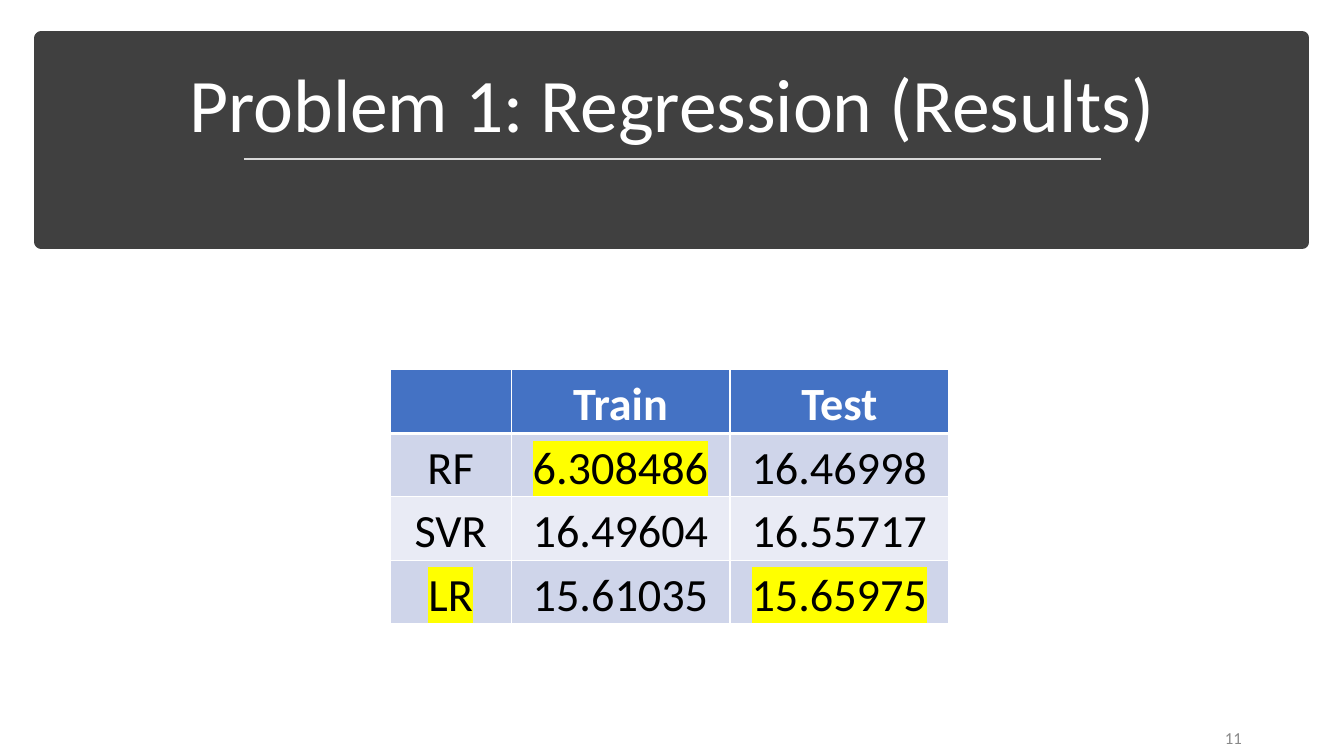
from lxml.etree import SubElement
from pptx import Presentation
from pptx.dml.color import RGBColor
from pptx.enum.shapes import MSO_CONNECTOR as Connector, MSO_SHAPE as Preset
from pptx.enum.text import MSO_ANCHOR as Anchor, MSO_AUTO_SIZE as AutoSize, PP_ALIGN as Align
from pptx.oxml.ns import qn
from pptx.util import Inches, Pt

COLORS = {
    "banner": "404040", "white": "FFFFFF", "rule": "D9D9D9", "number": "898989",
    "header": "4472C4", "odd": "CFD5EA", "even": "E9EBF5", "black": "000000",
    "highlight": "FFFF00",
}
RESULTS = [
    ["", "Train", "Test"],
    ["RF", "6.308486", "16.46998"],
    ["SVR", "16.49604", "16.55717"],
    ["LR", "15.61035", "15.65975"],
]
BEST = {"6.308486", "LR", "15.65975"}


def color(name):
    return RGBColor.from_string(COLORS[name])


class ResultsSlide:
    """Builds the results slide, with every length given in percent of the slide's size."""

    font = "Calibri"

    def __init__(self, presentation):
        self.width, self.height = presentation.slide_width, presentation.slide_height
        self.slide = presentation.slides.add_slide(presentation.slide_layouts[5])
        self.shapes = self.slide.shapes

    def across(self, share):
        return round(self.width * share / 100)

    def down(self, share):
        return round(self.height * share / 100)

    def box(self, left, top, width, height):
        return self.across(left), self.down(top), self.across(width), self.down(height)

    def set_text(self, frame, text, size, name, align, bold=False):
        frame.text = text
        paragraph = frame.paragraphs[0]
        paragraph.alignment = align
        for run in paragraph.runs:
            run.font.name, run.font.size, run.font.bold = self.font, Pt(size), bold
            run.font.color.rgb = color(name)
        return paragraph

    def title(self, text, *place):
        title = self.shapes.title
        title.left, title.top, title.width, title.height = self.box(*place)
        frame = title.text_frame
        frame.word_wrap, frame.auto_size = True, AutoSize.NONE
        frame.vertical_anchor = Anchor.BOTTOM
        self.set_text(frame, text, 54, "white", Align.CENTER).line_spacing = 0.9

    def banner(self, *place):
        banner = self.shapes.add_shape(Preset.RECTANGLE, *self.box(*place))
        banner.shadow.inherit = False
        banner.fill.solid()
        banner.fill.fore_color.rgb = banner.line.color.rgb = color("banner")
        banner.line.width = Pt(10)
        self.shapes.title.element.addprevious(banner.element)

    def rule(self, left, right, top):
        rule = self.shapes.add_connector(
            Connector.STRAIGHT, self.across(left), self.down(top), self.across(right), self.down(top))
        rule.line.color.rgb = color("rule")
        rule.line.width = Pt(1.75)
        SubElement(rule.element.spPr, qn("a:effectLst"))

    def number(self, text, *place):
        frame = self.shapes.add_textbox(*self.box(*place)).text_frame
        frame.word_wrap = True
        frame.vertical_anchor = Anchor.MIDDLE
        self.set_text(frame, text, 12, "number", Align.RIGHT).space_after = Pt(6)

    def table(self, rows, left, top, widths, row_height):
        place = self.box(left, top, sum(widths), row_height * len(rows))
        table = self.shapes.add_table(len(rows), len(widths), *place).table
        for column, width in zip(table.columns, widths):
            column.width = self.across(width)
        for index, values in enumerate(rows):
            table.rows[index].height = self.down(row_height)
            for column, text in enumerate(values):
                self.cell(table.cell(index, column), index, text)

    def cell(self, cell, row, text):
        cell.margin_left = cell.margin_right = cell.margin_top = Inches(0.01)
        cell.margin_bottom = 0
        cell.vertical_anchor = Anchor.BOTTOM
        self.borders(cell, top=3 if row == 1 else 1, bottom=3 if row == 0 else 1)
        cell.fill.solid()
        cell.fill.fore_color.rgb = color("header" if row == 0 else "odd" if row % 2 else "even")
        ink = "black" if row else "white"
        paragraph = self.set_text(cell.text_frame, text, 33, ink, Align.CENTER, bold=row == 0)
        if text in BEST:
            self.highlight(paragraph.runs[0])

    def borders(self, cell, top, bottom):
        properties = cell._tc.get_or_add_tcPr()
        for side, width in (("L", 1), ("R", 1), ("T", top), ("B", bottom)):
            line = SubElement(properties, qn(f"a:ln{side}"), w=str(Pt(width)))
            fill = SubElement(line, qn("a:solidFill"))
            SubElement(fill, qn("a:srgbClr"), val=COLORS["white"])

    def highlight(self, run):
        properties = run._r.get_or_add_rPr()
        mark = SubElement(properties, qn("a:highlight"))
        SubElement(mark, qn("a:srgbClr"), val=COLORS["highlight"])
        properties.find(qn("a:solidFill")).addnext(mark)


def main():
    presentation = Presentation()
    presentation.slide_width, presentation.slide_height = Inches(13.33), Inches(7.5)
    slide = ResultsSlide(presentation)
    slide.banner(3.08, 5.07, 93.83, 26.93)
    slide.title("Problem 1: Regression (Results)", 4.35, 6.8, 91.35, 13.6)
    slide.rule(18.15, 81.9, 21.07)
    slide.number("11", 70.65, 95.07, 22.5, 5.07)
    slide.table(RESULTS, 29.03, 48.93, [9, 16.28, 16.28], 8.4)
    presentation.save("out.pptx")


if __name__ == "__main__":
    main()
